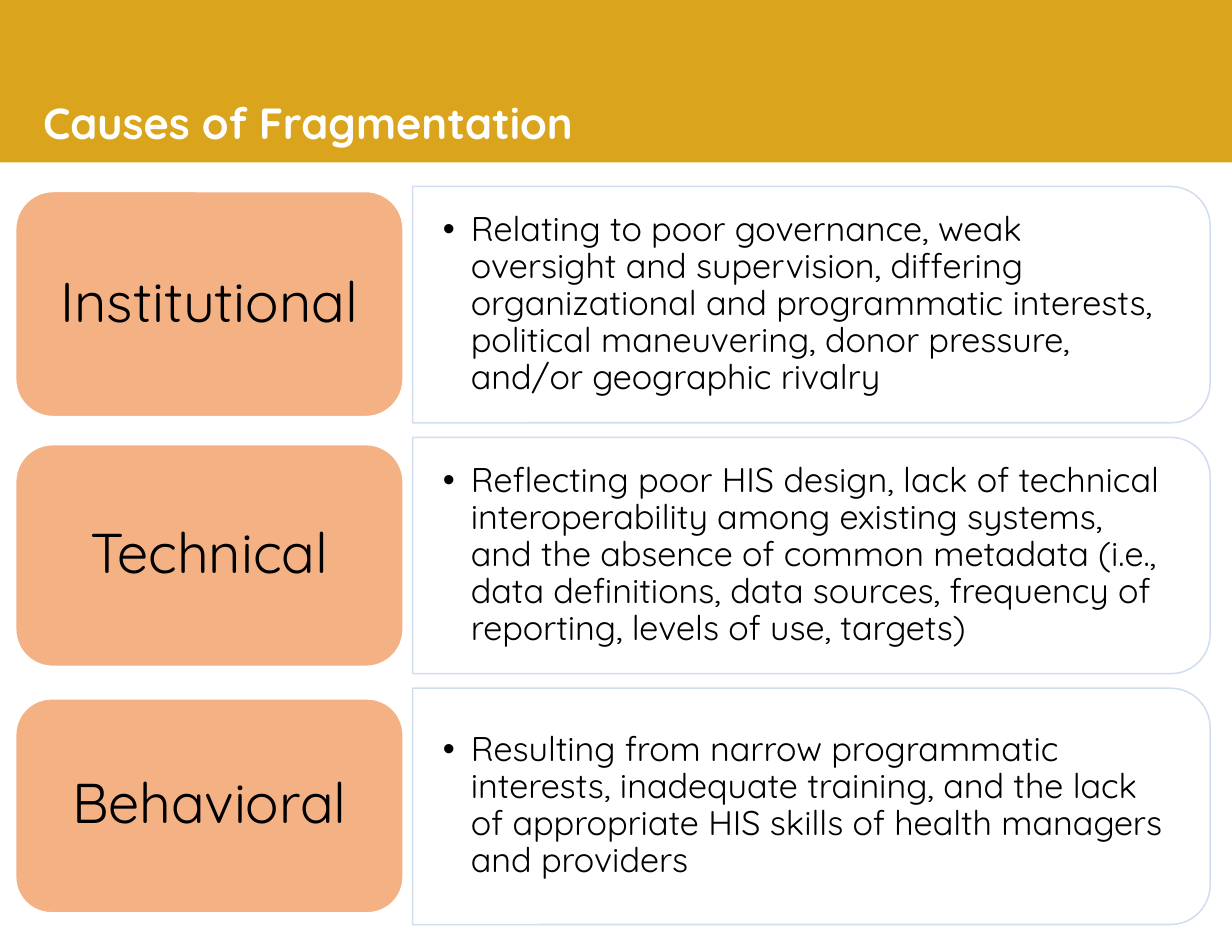
from lxml import etree
from pptx import Presentation
from pptx.dml.color import RGBColor
from pptx.enum import shapes, text
from pptx.oxml import ns
from pptx.util import Pt

GOLD = RGBColor(0xDA, 0xA5, 0x1C)
PEACH = RGBColor(0xF4, 0xB1, 0x83)
PALE = RGBColor(0xD2, 0xDE, 0xEF)
WHITE = RGBColor(0xFF, 0xFF, 0xFF)
BLACK = RGBColor(0, 0, 0)
KIND = shapes.MSO_SHAPE

# Label, label top and height, description
ROWS = [
    ("Institutional", 123.12, 144.72,
     "Relating to poor governance, weak oversight and supervision, differing "
     "organizational and programmatic interests, political maneuvering, donor "
     "pressure, and/or geographic rivalry"),
    ("Technical", 285.84, 142.56,
     "Reflecting poor HIS design, lack of technical interoperability among "
     "existing systems, and the absence of common metadata (i.e., data "
     "definitions, data sources, frequency of reporting, levels of use, targets)"),
    ("Behavioral", 449.28, 137.52,
     "Resulting from narrow programmatic interests, inadequate training, and the "
     "lack of appropriate HIS skills of health managers and providers"),
]
TOP, STEP = 119.88, 161.28
LEFT, WIDE, HIGH = 265.3, 512.64, 151.92

deck = Presentation()
deck.slide_width, deck.slide_height = Pt(792), Pt(612)
slide = deck.slides.add_slide(deck.slide_layouts[5])


def add_box(kind, x, y, w, h, fill, line=None):
    box = slide.shapes.add_shape(kind, Pt(x), Pt(y), Pt(w), Pt(h))
    box.shadow.inherit = False
    box.fill.solid()
    box.fill.fore_color.rgb = fill
    if line is None:
        box.line.fill.background()
    else:
        box.line.color.rgb = line
        box.line.width = Pt(1)
    return box


def write(shape, words, size, color, align, pad_x, pad_y, bold=False):
    frame = shape.text_frame
    frame.word_wrap = True
    frame.auto_size = text.MSO_AUTO_SIZE.NONE
    frame.vertical_anchor = text.MSO_ANCHOR.MIDDLE
    frame.margin_left = frame.margin_right = Pt(pad_x)
    frame.margin_top = frame.margin_bottom = Pt(pad_y)
    para = frame.paragraphs[0]
    para.alignment = align
    para.line_spacing = 0.9
    run = para.add_run()
    run.text = words
    run.font.name = "Quicksand"
    run.font.size = Pt(size)
    run.font.bold = bold
    run.font.color.rgb = color
    return para


# Header bar, placed behind the title
bar = add_box(KIND.RECTANGLE, -10.8, -13.68, 813.6, 118.08, GOLD)
slide.shapes._spTree.insert(2, bar._element)

# Title
title = slide.shapes.title
title.left, title.top, title.width, title.height = Pt(-198), Pt(54), Pt(792), Pt(53.28)
write(title, "Causes of Fragmentation", 28, WHITE, text.PP_ALIGN.CENTER, 7.2, 3.6, True)

for i, (name, top, height, words) in enumerate(ROWS):
    y = TOP + i * STEP

    # Panel: an upright shape turned so its round corners face right
    panel = add_box(KIND.ROUND_2_SAME_RECTANGLE, LEFT + (WIDE - HIGH) / 2,
                    y - (WIDE - HIGH) / 2, HIGH, WIDE, WHITE, PALE)
    panel.rotation = 90

    # Description with a bullet
    note = slide.shapes.add_textbox(Pt(LEFT), Pt(y + 7.5), Pt(505.44), Pt(136.8))
    para = write(note, words, 22, BLACK, text.PP_ALIGN.LEFT, 19.44, 10.08)
    props = para._p.get_or_add_pPr()
    props.set("marL", str(Pt(18)))
    props.set("indent", str(Pt(-18)))
    etree.SubElement(props, ns.qn("a:buFont")).set("typeface", "Arial")
    etree.SubElement(props, ns.qn("a:buChar")).set("char", "•")

    # Label
    label = add_box(KIND.ROUNDED_RECTANGLE, 10.08, top, 249.12, height, PEACH, WHITE)
    write(label, name, 36, BLACK, text.PP_ALIGN.CENTER, 10.8, 5.04)

deck.save("out.pptx")
